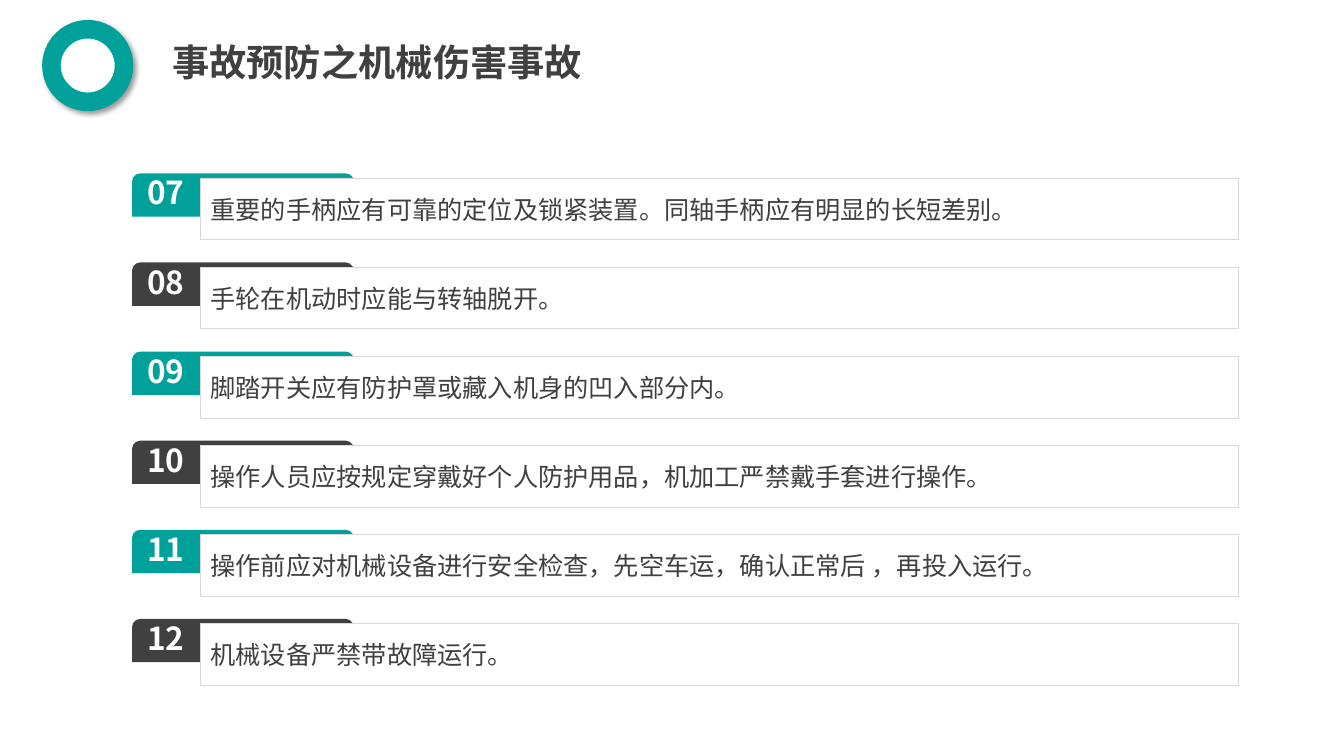
from lxml.etree import SubElement
from pptx import Presentation
from pptx.dml.color import RGBColor
from pptx.enum.shapes import MSO_SHAPE
from pptx.enum.text import MSO_ANCHOR, MSO_AUTO_SIZE, PP_ALIGN
from pptx.oxml import parse_xml
from pptx.oxml.ns import nsdecls, qn
from pptx.util import Inches, Pt

TEAL, DARK, WHITE, GRAY = "00A19A", "404040", "FFFFFF", "D9D9D9"
LATIN, HAN = "Arial", "Noto Sans CJK SC"
RULES = [
    "重要的手柄应有可靠的定位及锁紧装置。同轴手柄应有明显的长短差别。",
    "手轮在机动时应能与转轴脱开。",
    "脚踏开关应有防护罩或藏入机身的凹入部分内。",
    "操作人员应按规定穿戴好个人防护用品，机加工严禁戴手套进行操作。",
    "操作前应对机械设备进行安全检查，先空车运，确认正常后 ，再投入运行。",
    "机械设备严禁带故障运行。",
]
FIRST, TOP, PITCH = 7, 1.72, 4.42 / 5


def color(code):
    return RGBColor.from_string(code)


class Page:
    def __init__(self, slide):
        self.slide = slide

    def shape(self, kind, box, fill, line=None, width=0.75, home=None):
        """Add a filled shape to the slide, or to the group given as home."""
        shapes = (home or self.slide).shapes
        shape = shapes.add_shape(kind, *map(Inches, box))
        shape.shadow.inherit = False
        shape.fill.solid()
        shape.fill.fore_color.rgb = color(fill)
        if line:
            shape.line.color.rgb = color(line)
            shape.line.width = Pt(width)
        else:
            shape.line.fill.background()
        return shape

    def set_text(self, shape, text, size, ink, face=LATIN, bold=False,
                 align=PP_ALIGN.LEFT):
        frame = shape.text_frame
        frame.word_wrap = True
        frame.text = text
        para = frame.paragraphs[0]
        para.alignment = align
        for run in para.runs:
            font = run.font
            font.name, font.size, font.bold = face, Pt(size), bold
            font.color.rgb = color(ink)
            SubElement(run._r.get_or_add_rPr(), qn("a:ea"), typeface=HAN)

    def label(self, box, text, size, ink, home=None, **style):
        """Add a text box that grows with its text."""
        shape = (home or self.slide).shapes.add_textbox(*map(Inches, box))
        self.set_text(shape, text, size, ink, bold=True, **style)
        shape.text_frame.auto_size = MSO_AUTO_SIZE.SHAPE_TO_FIT_TEXT

    def ring(self, box):
        ring = self.shape(MSO_SHAPE.OVAL, box, WHITE, TEAL, 13.25)
        props = ring._element.spPr
        props.remove(props.find(qn("a:effectLst")))
        props.append(parse_xml(
            f'<a:effectLst {nsdecls("a")}><a:outerShdw blurRad="{Pt(4)}" '
            f'dist="{Pt(3)}" dir="{45 * 60000}" algn="tl" rotWithShape="0">'
            '<a:srgbClr val="000000"><a:alpha val="40000"/></a:srgbClr>'
            '</a:outerShdw></a:effectLst>'))

    def rule(self, top, number, text, fill):
        """Add one numbered rule: tab, framed text and number."""
        group = self.slide.shapes.add_group_shape()
        tab = self.shape(MSO_SHAPE.ROUND_2_SAME_RECTANGLE,
                         (1.31, top, 2.2, 0.43), fill, home=group)
        tab.adjustments[0], tab.adjustments[1] = 0.19, 0
        card = self.shape(MSO_SHAPE.RECTANGLE,
                          (1.99, top + 0.05, 10.29, 0.61), WHITE, GRAY,
                          home=group)
        self.set_text(card, text, 18, DARK, align=PP_ALIGN.JUSTIFY)
        card.text_frame.vertical_anchor = MSO_ANCHOR.MIDDLE
        self.label((1.28, top - 0.05, 0.73, 0.48), f"{number:02}", 22.6,
                   WHITE, home=group, face=HAN, align=PP_ALIGN.CENTER)


def main():
    deck = Presentation()
    deck.slide_width, deck.slide_height = Inches(13.33), Inches(7.5)
    page = Page(deck.slides.add_slide(deck.slide_layouts[6]))
    page.ring((0.51, 0.29, 0.72, 0.72))
    page.label((1.61, 0.34, 4.87, 0.55), "事故预防之机械伤害事故", 26.6, DARK)
    for i, text in enumerate(RULES):
        page.rule(TOP + i * PITCH, FIRST + i, text, DARK if i % 2 else TEAL)
    deck.save("out.pptx")


if __name__ == "__main__":
    main()
